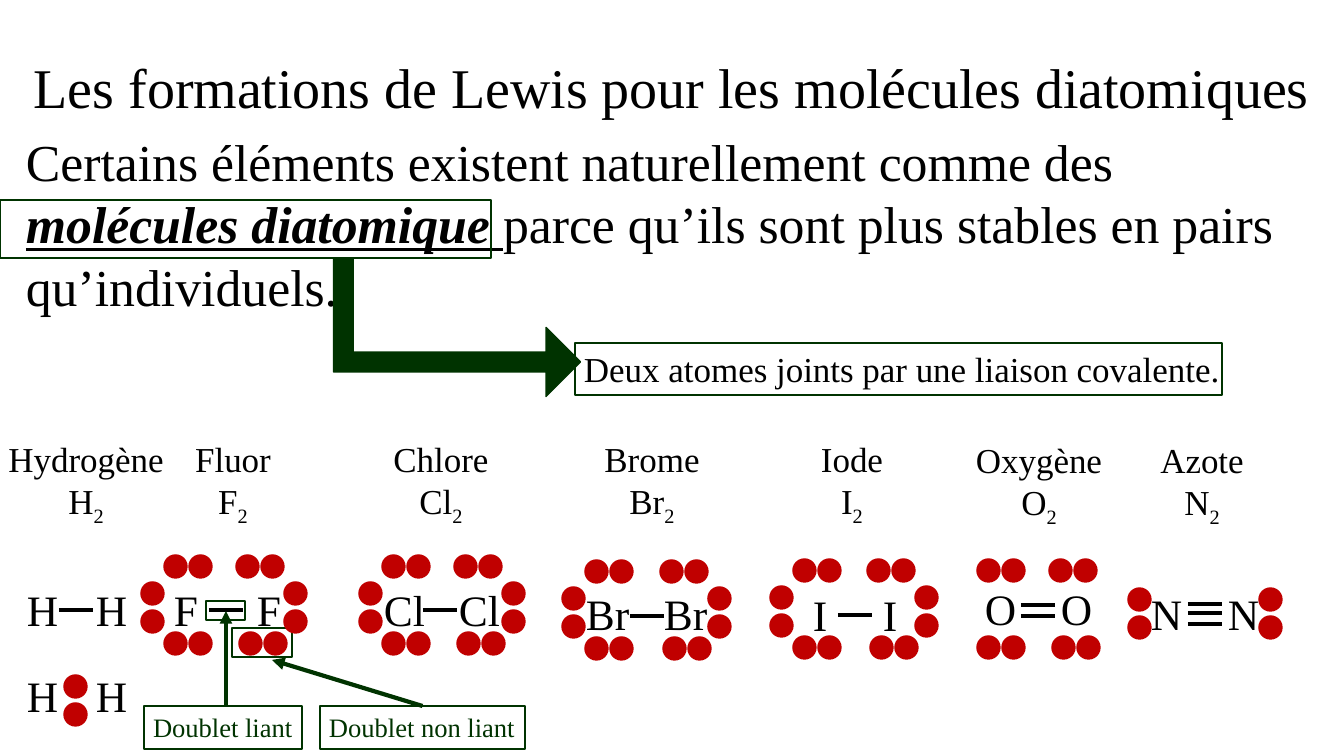
from lxml import etree
from pptx import Presentation, util as u
from pptx.dml.color import RGBColor
from pptx.enum import shapes, text
from pptx.oxml.ns import qn

SCALE = 914400 / 100.8  # EMU in one px
COLORS = {"ink": "000000", "green": "003300", "dot": "C00000", "paper": "FFFFFF"}
FONT = "Times New Roman"
SHAPE = shapes.MSO_SHAPE
CENTER = text.PP_ALIGN.CENTER
DOT = 23     # diameter of an electron
PAIR = 25    # step between two electrons in a row
STACK = 28   # step between two electrons in a column
BOND = 34    # length of a bond
LABEL = 178  # width of a label, fits the longest name

# formula, name, label centre and top
LABELS = [
    ("H", "Hydrogène", 86, 433), ("F", "Fluor", 233, 433),
    ("Cl", "Chlore", 441, 433), ("Br", "Brome", 652, 433),
    ("I", "Iode", 852, 433), ("O", "Oxygène", 1039, 434),
    ("N", "Azote", 1202, 434),
]
LETTER_WIDTH = {"H": 52, "F": 44, "Cl": 62, "Br": 65, "I": 35, "O": 52, "N": 52}

# symbol, box left and top, span to the right column, electron places,
# letter offsets (left, right, top), bond left, bond heights
MOLECULES = [
    ("H", 17, 555, 0, "", (0, 69, 23), 42, [55]),
    ("H", 17, 641, 94, "shared", (0, 69, 23), 0, []),
    ("F", 141, 555, 143, "rows columns", (23, 106, 23), 68, [55]),
    ("Cl", 359, 555, 143, "rows columns", (15, 90, 23), 64, [55]),
    ("Br", 562, 560, 146, "rows columns", (14, 92, 22), 68, [56]),
    ("I", 770, 559, 145, "rows columns", (33, 103, 24), 68, [56]),
    ("O", 954, 559, 143, "rows", (21, 97, 18), 67, [46, 57]),
    ("N", 1128, 561, 131, "columns", (13, 90, 21), 60, [43, 52, 63]),
]


def px(n):
    return u.Emu(round(n * SCALE))


def rgb(name):
    return RGBColor.from_string(COLORS[name])


def style(font, size, color="ink", **more):
    for key, value in {"name": FONT, "size": u.Pt(size), **more}.items():
        setattr(font, key, value)
    font.color.rgb = rgb(color)


def add_run(p, words, size, color="ink", **more):
    r = p.add_run()
    r.text = words
    style(r.font, size, color, **more)
    return r


def add_box(s, x, y, w, h, wrap=False):
    tf = s.shapes.add_textbox(px(x), px(y), px(w), px(h)).text_frame
    tf.word_wrap = wrap
    return tf


def add_shape(s, kind, x, y, w, h, fill=None, line="green", width=1):
    sp = s.shapes.add_shape(kind, px(x), px(y), px(w), px(h))
    sp.shadow.inherit = False
    if fill:
        sp.fill.solid()
        sp.fill.fore_color.rgb = rgb(fill)
    else:
        sp.fill.background()
    sp.line.color.rgb = rgb(line)
    sp.line.width = u.Pt(width)
    return sp


def add_line(s, x1, y1, x2, y2, color="ink", arrow=False):
    cx = s.shapes.add_connector(shapes.MSO_CONNECTOR.STRAIGHT, px(x1), px(y1), px(x2), px(y2))
    cx.line.color.rgb = rgb(color)
    cx.line.width = u.Pt(3)
    if arrow:
        etree.SubElement(cx.line._get_or_add_ln(), qn("a:tailEnd"), type="triangle")
    etree.SubElement(cx._element.spPr, qn("a:effectLst"))
    return cx


def add_caption(s, x, y, w, h, words, size, color, fill=None):
    """Framed single line of text."""
    sp = add_shape(s, SHAPE.RECTANGLE, x, y, w, h, fill)
    tf = sp.text_frame
    for key, value in {"word_wrap": False, "margin_left": px(9), "margin_right": 0,
                       "vertical_anchor": text.MSO_ANCHOR.TOP}.items():
        setattr(tf, key, value)
    p = tf.paragraphs[0]
    p.alignment = text.PP_ALIGN.LEFT
    add_run(p, words, size, color)
    return sp


def add_title(s, x, y, w, h):
    sp = s.shapes.title
    for key, value in {"left": x, "top": y, "width": w, "height": h}.items():
        setattr(sp, key, px(value))
    tf = sp.text_frame
    tf.auto_size = text.MSO_AUTO_SIZE.NONE
    tf.vertical_anchor = text.MSO_ANCHOR.MIDDLE
    p = tf.paragraphs[0]
    p.alignment, p.line_spacing = CENTER, 0.9
    add_run(p, "Les formations de Lewis pour les molécules diatomiques", 40)


def add_definition(s, x, y, w, h):
    # Sentence with the framed key term
    p = add_box(s, x, y, w, h, wrap=True).paragraphs[0]
    add_run(p, "Certains éléments existent naturellement comme des ", 37)
    add_run(p, "molécules diatomique ", 37, bold=True, italic=True, underline=True)
    add_run(p, "parce qu’ils sont plus stables en pairs qu’individuels.", 37)
    add_shape(s, SHAPE.RECTANGLE, x - 16, y + 75, 491, 58, width=1.5)

    # Bent arrow to the meaning
    arrow = add_shape(s, SHAPE.BENT_UP_ARROW, x + 372, y + 79, 138, 247, "green")
    arrow.rotation = 90
    arrow.adjustments[0] = 0.143
    add_caption(s, x + 559, y + 218, 647, 52,
                "Deux atomes joints par une liaison covalente.", 25, "ink")


def add_label(s, symbol, name, center, y):
    tf = add_box(s, center - LABEL / 2, y, LABEL, 95)
    p = tf.paragraphs[0]
    p.alignment = CENTER
    add_run(p, name, 25)
    p = tf.add_paragraph()
    p.alignment = CENTER
    add_run(p, symbol, 25)
    r = add_run(p, "2", 25)
    r._r.get_or_add_rPr().set("baseline", "-25000")


def electron_places(span, places):
    spots = []
    if "rows" in places:
        for left, top in ((23, 0), (span - 48, 0), (23, 77), (span - 45, 77)):
            spots += [(left, top), (left + PAIR, top)]
    if "columns" in places:
        for left in (0, span):
            spots += [(left, 27), (left, 27 + STACK)]
    if "shared" in places:
        spots += [(span / 2, 34), (span / 2, 34 + STACK)]
    return spots


def add_molecule(s, symbol, x, y, span, places, letters, bond_left, bonds):
    left, right, top = letters
    for dx in (left, right):
        tf = add_box(s, x + dx, y + top, LETTER_WIDTH[symbol], 62)
        add_run(tf.paragraphs[0], symbol, 31)
    for dy in bonds:
        add_line(s, x + bond_left, y + dy, x + bond_left + BOND, y + dy)
    for dx, dy in electron_places(span, places):
        add_shape(s, SHAPE.OVAL, x + dx, y + dy, DOT, DOT, "dot", "dot")


def add_pair_frames(s, x, y):
    # Frames behind the bond and the lone pair of fluorine
    add_shape(s, SHAPE.RECTANGLE, x + 91, y + 73, 60, 29, "paper")
    add_shape(s, SHAPE.RECTANGLE, x + 65, y + 46, 39, 19, "paper")


def add_pair_captions(s, x, y):
    add_caption(s, x, y, 158, 43, "Doublet liant", 19, "green", "paper")
    lone = add_caption(s, x + 176, y, 205, 43, "Doublet non liant", 19, "green", "paper")
    add_line(s, x + 82, y, x + 82, y - 95, "green", arrow=True)
    cx = add_line(s, x + 278, y, x + 128, y - 46, "green", arrow=True)
    cx.begin_connect(lone, 0)


def main():
    prs = Presentation()
    prs.slide_width, prs.slide_height = px(1344), px(756)
    s = prs.slides.add_slide(prs.slide_layouts[5])
    add_title(s, 17, 40, 1309, 100)
    add_definition(s, 16, 125, 1310, 199)
    add_pair_frames(s, 141, 555)
    for label in LABELS:
        add_label(s, *label)
    for molecule in MOLECULES:
        add_molecule(s, *molecule)
    add_pair_captions(s, 144, 706)
    prs.save("out.pptx")


if __name__ == "__main__":
    main()
